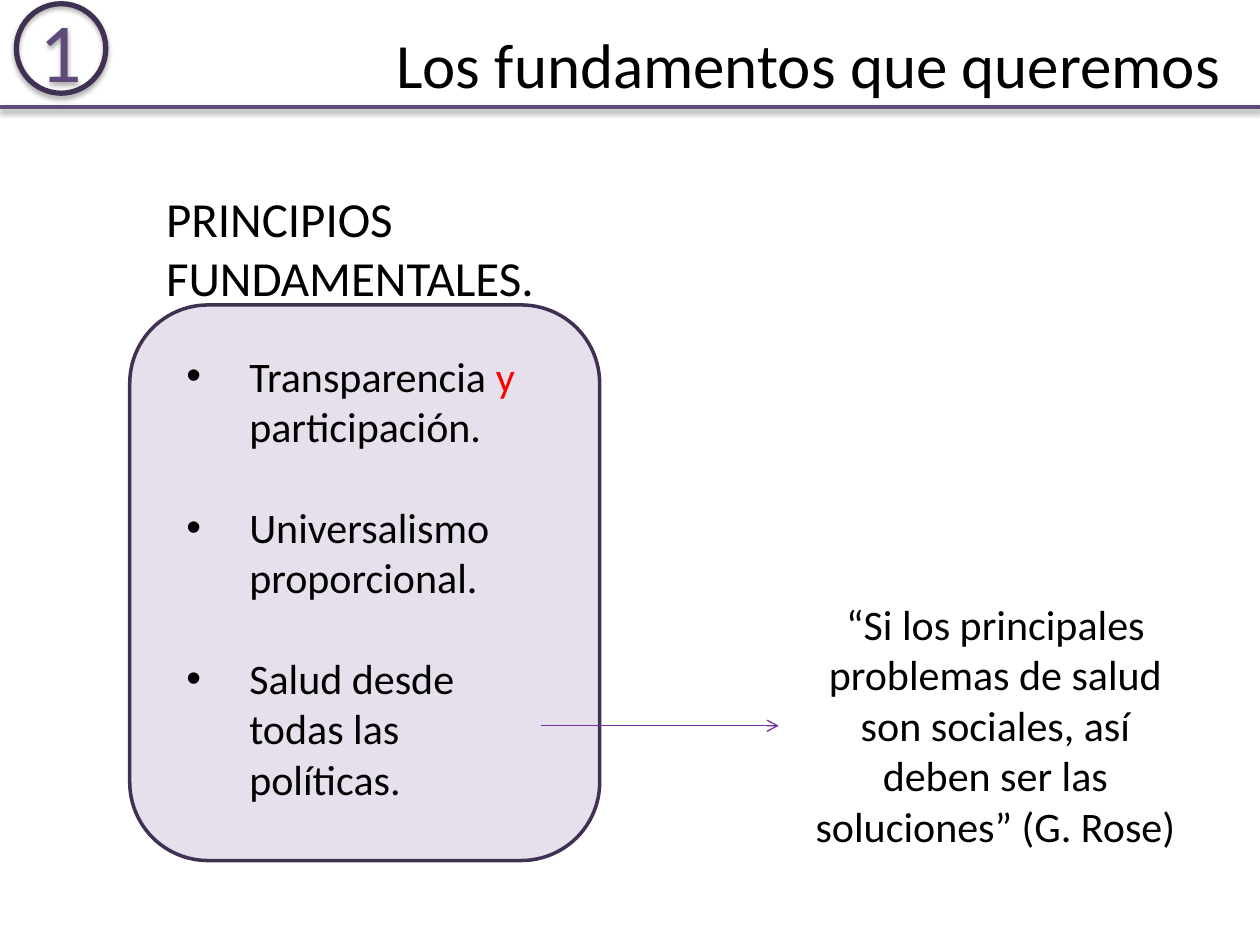
"""Build the slide on the founding principles, with a quotation beside them."""
import lxml.etree
import pptx
import pptx.dml.color
import pptx.enum.shapes
import pptx.enum.text
import pptx.oxml
import pptx.oxml.ns
import pptx.util

COLORS = {"text": "000000", "accent": "FF0000", "rule": "604A7B",
          "outline": "403152", "panel": "E6E0EC", "arrow": "7030A0"}
rgb = {name: pptx.dml.color.RGBColor.from_string(value) for name, value in COLORS.items()}
qn = pptx.oxml.ns.qn
CENTER = pptx.enum.text.PP_ALIGN.CENTER
MIDDLE = pptx.enum.text.MSO_ANCHOR.MIDDLE
SHAPES = pptx.enum.shapes.MSO_SHAPE
STRAIGHT = pptx.enum.shapes.MSO_CONNECTOR.STRAIGHT

presentation = pptx.Presentation()
presentation.slide_width = pptx.util.Inches(10)
presentation.slide_height = pptx.util.Inches(7.5)
column = presentation.slide_width / 100
row = presentation.slide_height / 75
slide = presentation.slides.add_slide(presentation.slide_layouts[5])


def grid(left, top, width, height):
    return [round(length) for length in (left * column, top * row, width * column, height * row)]


def add_run(paragraph, text, size, color="text"):
    run = paragraph.add_run()
    run.text = text
    run.font.name = "Calibri"
    run.font.size = pptx.util.Pt(size)
    run.font.color.rgb = rgb[color]


panel = slide.shapes.add_shape(SHAPES.ROUNDED_RECTANGLE, *grid(10.3, 24.2, 37.3, 44.1))
panel.shadow.inherit = False
panel.fill.solid()
panel.fill.fore_color.rgb = rgb["panel"]
panel.line.color.rgb = rgb["outline"]
panel.line.width = pptx.util.Pt(2)

principles = [
    [("Transparencia ", "text"), ("y", "accent"), (" participación.", "text")],
    [("Universalismo proporcional.", "text")],
    [("Salud desde todas las políticas.", "text")],
]
indent = round(5 * column)
frame = slide.shapes.add_textbox(*grid(13.8, 27.3, 29.1, 37.4)).text_frame
frame.word_wrap = True
for index, principle in enumerate(principles):
    paragraph = frame.add_paragraph() if index else frame.paragraphs[0]
    if index:
        paragraph.space_before = pptx.util.Pt(28.8)
    for text, color in principle:
        add_run(paragraph, text, 24, color)
    properties = paragraph._p.get_or_add_pPr()
    properties.set("marL", str(indent))
    properties.set("indent", str(-indent))
    lxml.etree.SubElement(properties, qn("a:buFont"), typeface="Arial")
    lxml.etree.SubElement(properties, qn("a:buChar"), char="•")

for place, text, size, alignment in [
    (grid(12.2, 14.5, 32.3, 10.4), "PRINCIPIOS FUNDAMENTALES.", 28, None),
    (grid(63.1, 47, 31.8, 21.2),
     "“Si los principales problemas de salud son sociales, así deben ser las soluciones” (G. Rose)",
     24, CENTER),
]:
    frame = slide.shapes.add_textbox(*place).text_frame
    frame.word_wrap = True
    frame.paragraphs[0].alignment = alignment
    add_run(frame.paragraphs[0], text, size)

title = slide.shapes.title
title.left, title.top, title.width, title.height = grid(28.3, 1.5, 71.7, 7.1)
title.text_frame.vertical_anchor = MIDDLE
title.text_frame.paragraphs[0].alignment = CENTER
add_run(title.text_frame.paragraphs[0], "Los fundamentos que queremos", 36)

rule = slide.shapes.add_connector(STRAIGHT, *grid(0, 8.5, 100, 8.5))
arrow = slide.shapes.add_connector(STRAIGHT, *grid(42.9, 57.6, 61.8, 57.6))
badge = slide.shapes.add_shape(SHAPES.OVAL, *grid(1.3, 0.3, 7.1, 7.1))
badge.fill.background()
badge.shadow.inherit = False
badge.text_frame.word_wrap = False
badge.text_frame.vertical_anchor = MIDDLE
badge.text_frame.paragraphs[0].alignment = CENTER
add_run(badge.text_frame.paragraphs[0], "1", 48, "rule")

for shape, color, width, opacity, distance in [
    (rule, "rule", 2, 38, 1.6), (arrow, "arrow", 0.75, 0, 0), (badge, "outline", 3, 35, 1.8),
]:
    shape.line.color.rgb = rgb[color]
    shape.line.width = pptx.util.Pt(width)
    properties = shape._element.spPr
    effects = properties.find(qn("a:effectLst"))
    if effects is None:
        effects = lxml.etree.SubElement(properties, qn("a:effectLst"))
    if opacity:
        shadow = lxml.etree.SubElement(
            effects, qn("a:outerShdw"), blurRad=str(pptx.util.Pt(3.1)),
            dist=str(pptx.util.Pt(distance)), dir="5400000", rotWithShape="0")
        tint = lxml.etree.SubElement(shadow, qn("a:srgbClr"), val=COLORS["text"])
        lxml.etree.SubElement(tint, qn("a:alpha"), val=str(opacity * 1000))

lxml.etree.SubElement(arrow.line._get_or_add_ln(), qn("a:tailEnd"), type="arrow")

presentation.save("out.pptx")
